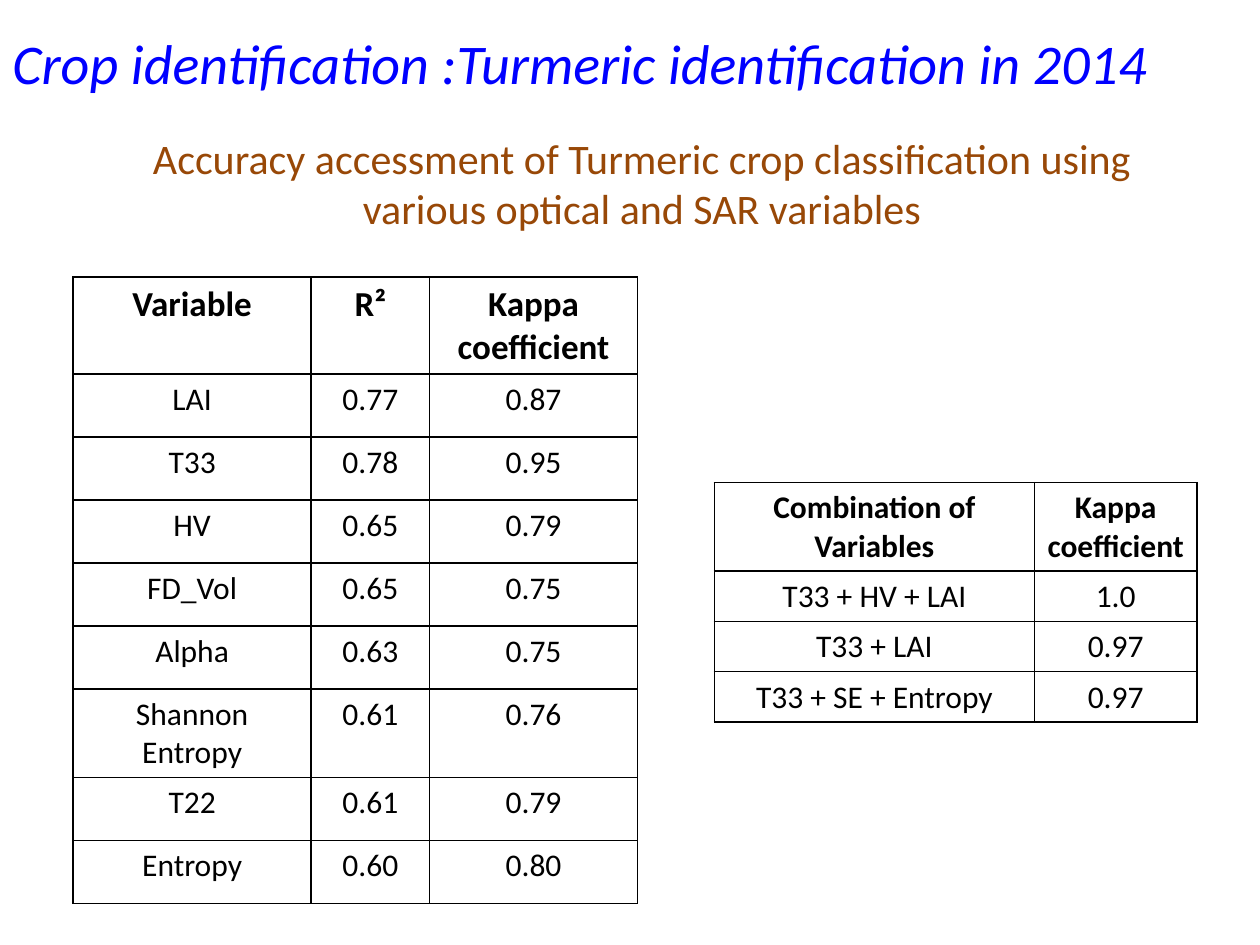
from lxml import etree
from pptx import Presentation
from pptx.dml.color import RGBColor
from pptx.enum.text import MSO_ANCHOR, PP_ALIGN
from pptx.oxml.ns import qn
from pptx.util import Inches, Pt

BLACK = RGBColor(0x00, 0x00, 0x00)
BLUE = RGBColor(0x00, 0x00, 0xFF)
BROWN = RGBColor(0x98, 0x48, 0x07)
LEFT, CENTER = PP_ALIGN.LEFT, PP_ALIGN.CENTER
TOP, MIDDLE = MSO_ANCHOR.TOP, MSO_ANCHOR.MIDDLE

SCORES = [
    ("Variable", "R²", "Kappa coefficient"),
    ("LAI", "0.77", "0.87"),
    ("T33", "0.78", "0.95"),
    ("HV", "0.65", "0.79"),
    ("FD_Vol", "0.65", "0.75"),
    ("Alpha", "0.63", "0.75"),
    ("Shannon Entropy", "0.61", "0.76"),
    ("T22", "0.61", "0.79"),
    ("Entropy", "0.60", "0.80"),
]
COMBOS = [
    ("Combination of Variables", "Kappa coefficient"),
    ("T33 + HV + LAI", "1.0"),
    ("T33 + LAI", "0.97"),
    ("T33 + SE + Entropy", "0.97"),
]


class Page:
    font = "Calibri"
    size = 18
    line = Pt(1)

    def __init__(self, slide):
        self.slide = slide

    def label(self, frame, text, size, color, align=CENTER, bold=False, italic=False):
        para = frame.paragraphs[0]
        para.text = text
        para.alignment = align
        font = para.font
        font.name, font.size = self.font, Pt(size)
        font.bold, font.italic = bold, italic
        font.color.rgb = color

    def text(self, box, text, size, color, anchor=TOP, **style):
        frame = self.slide.shapes.add_textbox(*map(Inches, box)).text_frame
        frame.word_wrap = True
        frame.vertical_anchor = anchor
        self.label(frame, text, size, color, **style)

    def border(self, cell):
        props = cell._tc.get_or_add_tcPr()
        for side in ("a:lnL", "a:lnR", "a:lnT", "a:lnB"):
            edge = etree.SubElement(props, qn(side), w=str(self.line))
            fill = etree.SubElement(edge, qn("a:solidFill"))
            etree.SubElement(fill, qn("a:srgbClr"), val=str(BLACK))

    def table(self, left, top, widths, heights, rows, head):
        """Draw a ruled table; head is the text size of its first row."""
        box = (left, top, sum(widths), sum(heights))
        table = self.slide.shapes.add_table(
            len(rows), len(widths), *map(Inches, box)).table
        table.first_row = table.horz_banding = False
        for col, width in zip(table.columns, widths):
            col.width = Inches(width)
        for row, height in zip(table.rows, heights):
            row.height = Inches(height)
        for r, row in enumerate(rows):
            for c, text in enumerate(row):
                cell = table.cell(r, c)
                self.border(cell)
                cell.fill.background()
                size = self.size if r else head
                self.label(cell.text_frame, text, size, BLACK, bold=r == 0)


def main():
    deck = Presentation()
    deck.slide_width, deck.slide_height = Inches(10), Inches(7.5)
    page = Page(deck.slides.add_slide(deck.slide_layouts[6]))
    page.text((0.92, 1, 8.35, 0.91),
              "Accuracy accessment of Turmeric crop classification using "
              "various optical and SAR variables", 24, BROWN)
    page.table(0.58, 2.2, [1.89, 0.94, 1.65],
               [0.77] + [0.5] * 5 + [0.7] + [0.5] * 2, SCORES, head=20)
    page.text((0, 0.08, 9.5, 0.83),
              "Crop identification :Turmeric identification in 2014",
              32, BLUE, MIDDLE, align=LEFT, italic=True)
    page.table(5.67, 3.83, [2.54, 1.29], [0.7] + [0.4] * 3, COMBOS, head=18)
    deck.save("out.pptx")


if __name__ == "__main__":
    main()
